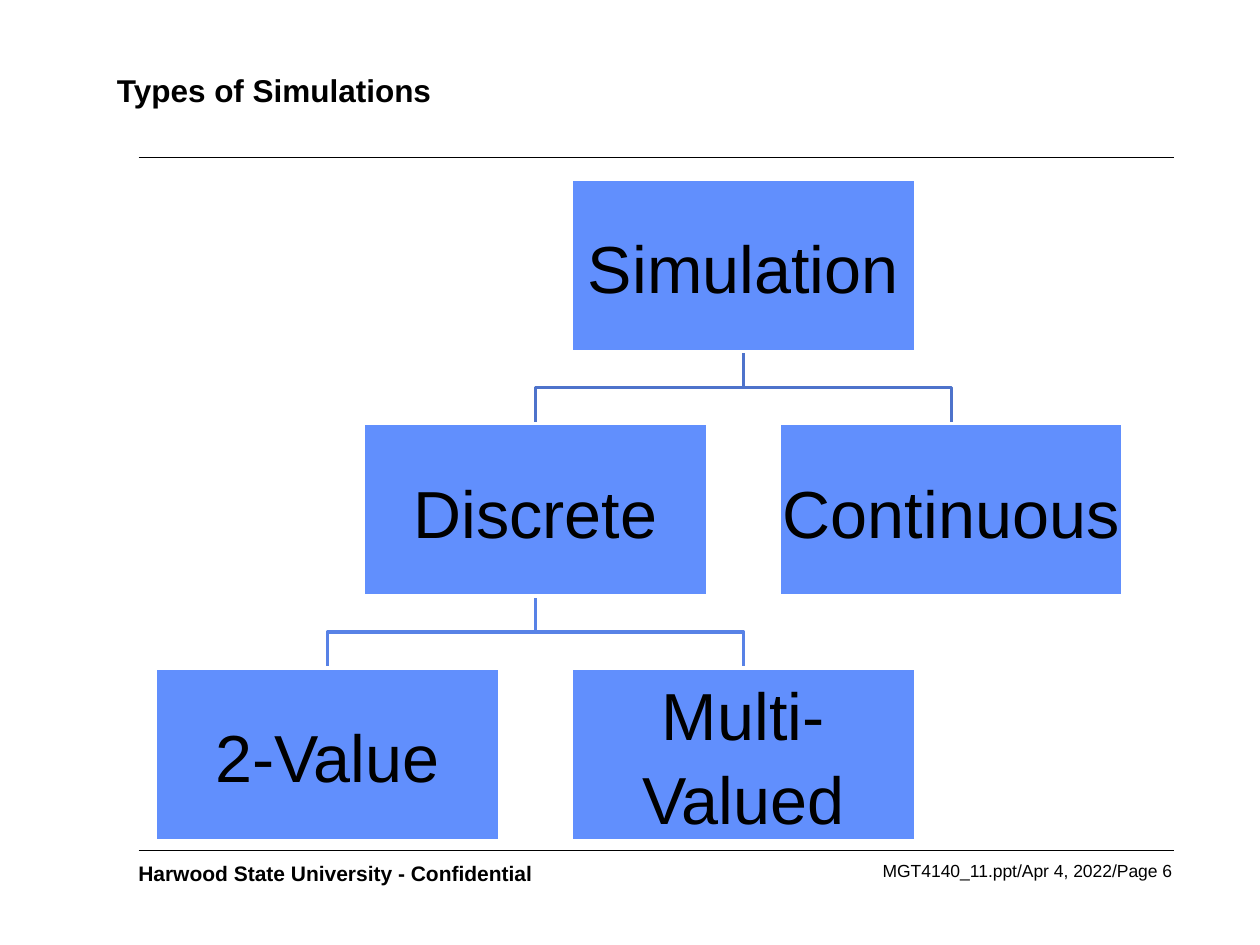
from dataclasses import dataclass

from lxml.etree import SubElement
from pptx import Presentation
from pptx.dml.color import RGBColor
from pptx.enum.shapes import MSO_CONNECTOR, MSO_SHAPE
from pptx.enum.text import MSO_ANCHOR, PP_ALIGN
from pptx.oxml.ns import qn
from pptx.util import Inches, Pt


@dataclass(frozen=True)
class Theme:
    font: str = "Arial"
    ink: str = "000000"
    paper: str = "FFFFFF"
    node: str = "618FFD"
    upper_branch: str = "4E73CB"
    lower_branch: str = "5882E6"
    title_size: int = 18
    footer_size: int = 12
    page_size: int = 10
    node_size: int = 38


theme = Theme()


def write(frame, text, size, bold=False, align=PP_ALIGN.LEFT,
          anchor=MSO_ANCHOR.TOP, margins=(0.1, 0.05), spacing=None):
    frame.word_wrap = True
    frame.vertical_anchor = anchor
    frame.margin_left = frame.margin_right = Inches(margins[0])
    frame.margin_top = frame.margin_bottom = Inches(margins[1])
    paragraph = frame.paragraphs[0]
    paragraph.alignment = align
    paragraph.line_spacing = spacing
    run = paragraph.add_run()
    run.text = text
    run.font.name = theme.font
    run.font.size = Pt(size)
    run.font.bold = bold
    run.font.color.rgb = RGBColor.from_string(theme.ink)


def outline(line, color, width):
    line.color.rgb = RGBColor.from_string(color)
    line.width = Pt(width)


deck = Presentation()
deck.slide_width, deck.slide_height = Inches(10), Inches(7.5)
slide = deck.slides.add_slide(deck.slide_layouts[6])
shapes = slide.shapes

captions = [
    ((5.58, 6.78, 3.82, 0.26), "MGT4140_11.ppt/Apr 4, 2022/Page 6",
     dict(size=theme.page_size, align=PP_ALIGN.RIGHT)),
    ((1, 6.78, 3.84, 0.3), "Harwood State University - Confidential",
     dict(size=theme.footer_size, bold=True)),
    ((0.83, 0.25, 8.5, 0.92), "Types of Simulations",
     dict(size=theme.title_size, bold=True, anchor=MSO_ANCHOR.MIDDLE)),
]
for area, text, style in captions:
    caption = shapes.add_textbox(*map(Inches, area))
    write(caption.text_frame, text, **style)

for rule_y in (1.25, 6.75):
    rule = shapes.add_connector(MSO_CONNECTOR.STRAIGHT, Inches(1.1), Inches(rule_y),
                                Inches(9.32), Inches(rule_y))
    outline(rule.line, theme.ink, 1)
    SubElement(rule._element.spPr, qn("a:effectLst"))

node_width, node_height = 2.73, 1.37
first_center, column_step = 2.6, 1.65
first_top, row_step = 1.42, 1.94

nodes = {
    "Simulation": (2, 0),
    "Discrete": (1, 1),
    "2-Value": (0, 2),
    "Multi-Valued": (2, 2),
    "Continuous": (3, 1),
}
branches = [
    ("Simulation", "Continuous", theme.upper_branch),
    ("Discrete", "Multi-Valued", theme.lower_branch),
    ("Discrete", "2-Value", theme.lower_branch),
    ("Simulation", "Discrete", theme.upper_branch),
]

for parent, child, color in branches:
    parent_column, parent_row = nodes[parent]
    child_column, child_row = nodes[child]
    parent_x = first_center + parent_column * column_step
    child_x = first_center + child_column * column_step
    start_y = first_top + parent_row * row_step + node_height
    end_y = first_top + child_row * row_step
    bend_y = (start_y + end_y) / 2
    path = shapes.build_freeform(Inches(parent_x), Inches(start_y))
    path.add_line_segments(
        [(Inches(x), Inches(y)) for x, y in
         ((parent_x, bend_y), (child_x, bend_y), (child_x, end_y))], close=False)
    branch = path.convert_to_shape()
    branch.shadow.inherit = False
    branch.fill.background()
    outline(branch.line, color, 2)

for label, (column, row) in nodes.items():
    node = shapes.add_shape(
        MSO_SHAPE.RECTANGLE,
        Inches(first_center + column * column_step - node_width / 2),
        Inches(first_top + row * row_step), Inches(node_width), Inches(node_height))
    node.shadow.inherit = False
    node.fill.solid()
    node.fill.fore_color.rgb = RGBColor.from_string(theme.node)
    outline(node.line, theme.paper, 2)
    write(node.text_frame, label, theme.node_size, align=PP_ALIGN.CENTER,
          anchor=MSO_ANCHOR.MIDDLE, margins=(0, 0.03), spacing=1.05)

deck.save("out.pptx")
